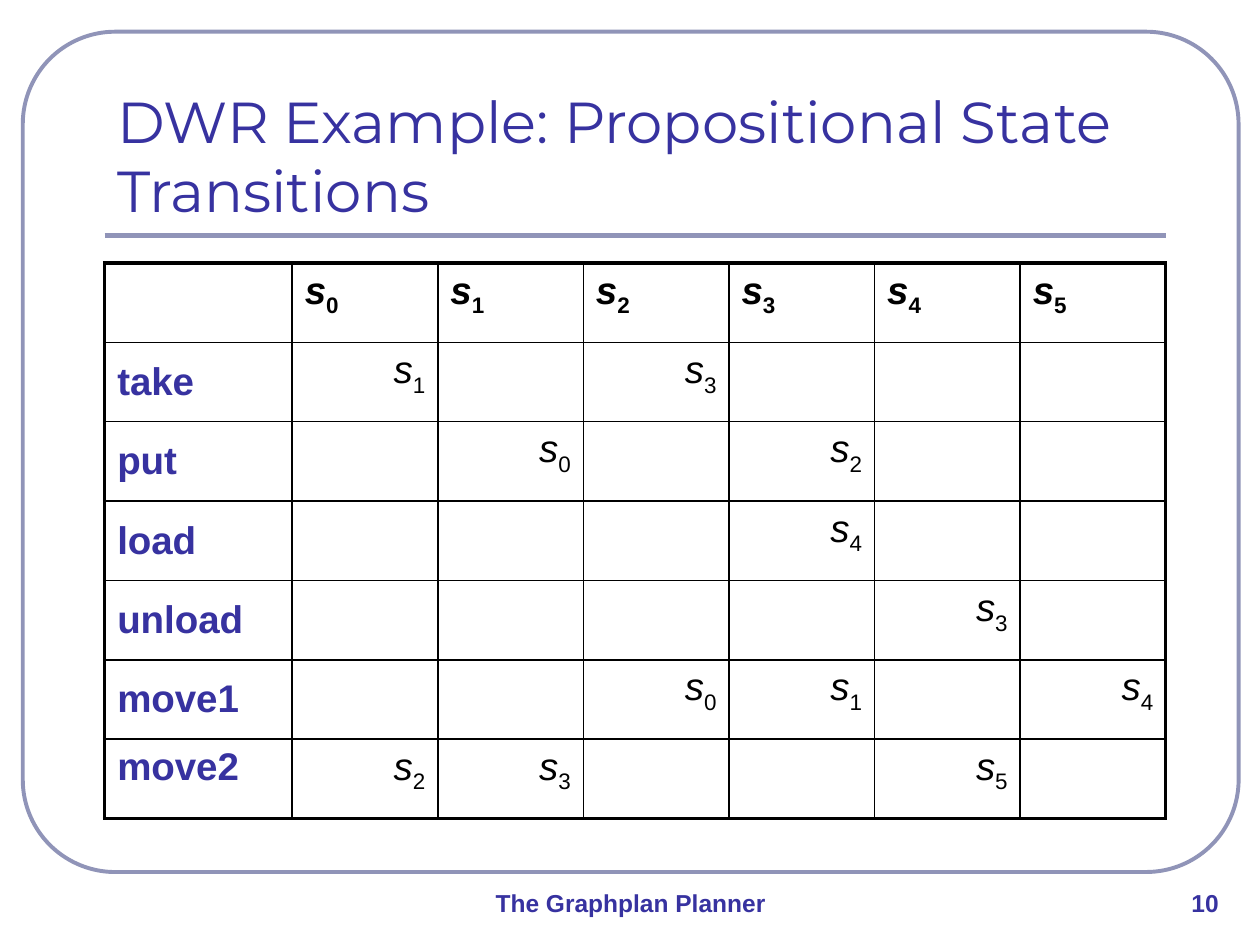
from lxml.etree import SubElement
from pptx import Presentation
from pptx.dml.color import RGBColor
from pptx.enum.shapes import MSO_CONNECTOR, MSO_SHAPE
from pptx.enum.text import MSO_ANCHOR, MSO_AUTO_SIZE, PP_ALIGN
from pptx.oxml import parse_xml
from pptx.oxml.ns import nsdecls, qn
from pptx.util import Cm, Pt

INDIGO = RGBColor(0x37, 0x32, 0xA0)
LAVENDER = RGBColor(0x90, 0x94, 0xB8)
BLACK = RGBColor(0, 0, 0)

TITLE = "DWR Example: Propositional State Transitions"
FOOTERS = [
    ("The Graphplan Planner", 6.71, 12.01),
    ("10", 23.29, 2.01),
]
STATES = ["0", "1", "2", "3", "4", "5"]
TRANSITIONS = {
    "take": {"0": "1", "2": "3"},
    "put": {"1": "0", "3": "2"},
    "load": {"3": "4"},
    "unload": {"4": "3"},
    "move1": {"2": "0", "3": "1", "5": "4"},
    "move2": {"0": "2", "1": "3", "4": "5"},
}

LEFT, WIDTH = 2.11, 21.39
TABLE_TOP, ROW_HEIGHT = 5.3, 1.6
ACTION_WIDTH = 3.78
STATE_WIDTH = (WIDTH - ACTION_WIDTH) / len(STATES)
INNER_BORDER, OUTER_BORDER = Pt(1), Pt(2.25)


def add_text(frame, text, size=22, color=BLACK, font="Arial", bold=False,
             italic=False, align=PP_ALIGN.LEFT, subscript=False):
    paragraph = frame.paragraphs[0]
    paragraph.alignment = align
    run = paragraph.add_run()
    run.text = text
    run.font.name = font
    run.font.size = Pt(size)
    run.font.bold = bold
    run.font.italic = italic
    run.font.color.rgb = color
    if subscript:
        run.font._element.set("baseline", "-25000")


def add_state(cell, number, **style):
    add_text(cell.text_frame, "s", italic=True, **style)
    add_text(cell.text_frame, number, subscript=True, **style)


def set_borders(cell, widths):
    properties = cell._tc.get_or_add_tcPr()
    for position, (side, width) in enumerate(widths.items()):
        border = parse_xml(
            f'<a:ln{side} {nsdecls("a")} w="{width}"><a:solidFill>'
            f'<a:srgbClr val="{BLACK}"/></a:solidFill></a:ln{side}>')
        properties.insert(position, border)


def add_frame(slide):
    frame = slide.shapes.add_shape(
        MSO_SHAPE.ROUNDED_RECTANGLE, Cm(0.46), Cm(0.64), Cm(24.51), Cm(16.94))
    frame.adjustments[0] = 0.11
    frame.shadow.inherit = False
    frame.fill.background()
    frame.line.color.rgb = LAVENDER
    frame.line.width = Pt(2.25)
    rule = slide.shapes.add_connector(
        MSO_CONNECTOR.STRAIGHT, Cm(LEFT), Cm(4.75), Cm(LEFT + WIDTH), Cm(4.75))
    rule.line.color.rgb = LAVENDER
    rule.line.width = Pt(3)
    SubElement(rule._element.spPr, qn("a:effectLst"))


def add_title(slide):
    title = slide.shapes.title
    title.left, title.top = Cm(LEFT), Cm(1.47)
    title.width, title.height = Cm(WIDTH), Cm(3.18)
    frame = title.text_frame
    frame.word_wrap = True
    frame.auto_size = MSO_AUTO_SIZE.NONE
    frame.vertical_anchor = MSO_ANCHOR.BOTTOM
    add_text(frame, TITLE, size=33, color=INDIGO, font="Montserrat")


def add_footers(slide):
    for text, left, width in FOOTERS:
        box = slide.shapes.add_textbox(Cm(left), Cm(17.78), Cm(width), Cm(1.27))
        box.text_frame.word_wrap = True
        add_text(box.text_frame, text, size=14, color=INDIGO, bold=True,
                 align=PP_ALIGN.CENTER)


def add_transition_table(slide):
    row_count, column_count = len(TRANSITIONS) + 1, len(STATES) + 1
    table = slide.shapes.add_table(
        row_count, column_count, Cm(LEFT), Cm(TABLE_TOP),
        Cm(WIDTH), Cm(ROW_HEIGHT * row_count)).table
    table.first_row = table.horz_banding = False
    for index, column in enumerate(table.columns):
        column.width = Cm(STATE_WIDTH if index else ACTION_WIDTH)
    for row in table.rows:
        row.height = Cm(ROW_HEIGHT)

    for column, state in enumerate(STATES, 1):
        add_state(table.cell(0, column), state, bold=True)
    for row, (action, results) in enumerate(TRANSITIONS.items(), 1):
        action_cell = table.cell(row, 0)
        add_text(action_cell.text_frame, action, color=INDIGO, bold=True)
        if row < row_count - 1:
            action_cell.vertical_anchor = MSO_ANCHOR.MIDDLE
        for state, result in results.items():
            add_state(table.cell(row, STATES.index(state) + 1), result,
                      align=PP_ALIGN.RIGHT)

    for row in range(row_count):
        for column in range(column_count):
            cell = table.cell(row, column)
            cell.fill.background()
            outer = {"L": column == 0, "R": column == column_count - 1,
                     "T": row == 0, "B": row == row_count - 1}
            set_borders(cell, {side: OUTER_BORDER if is_outer else INNER_BORDER
                               for side, is_outer in outer.items()})


def main():
    presentation = Presentation()
    presentation.slide_width, presentation.slide_height = Cm(25.4), Cm(19.05)
    slide = presentation.slides.add_slide(presentation.slide_layouts[5])
    add_frame(slide)
    add_footers(slide)
    add_title(slide)
    add_transition_table(slide)
    presentation.save("out.pptx")


if __name__ == "__main__":
    main()
